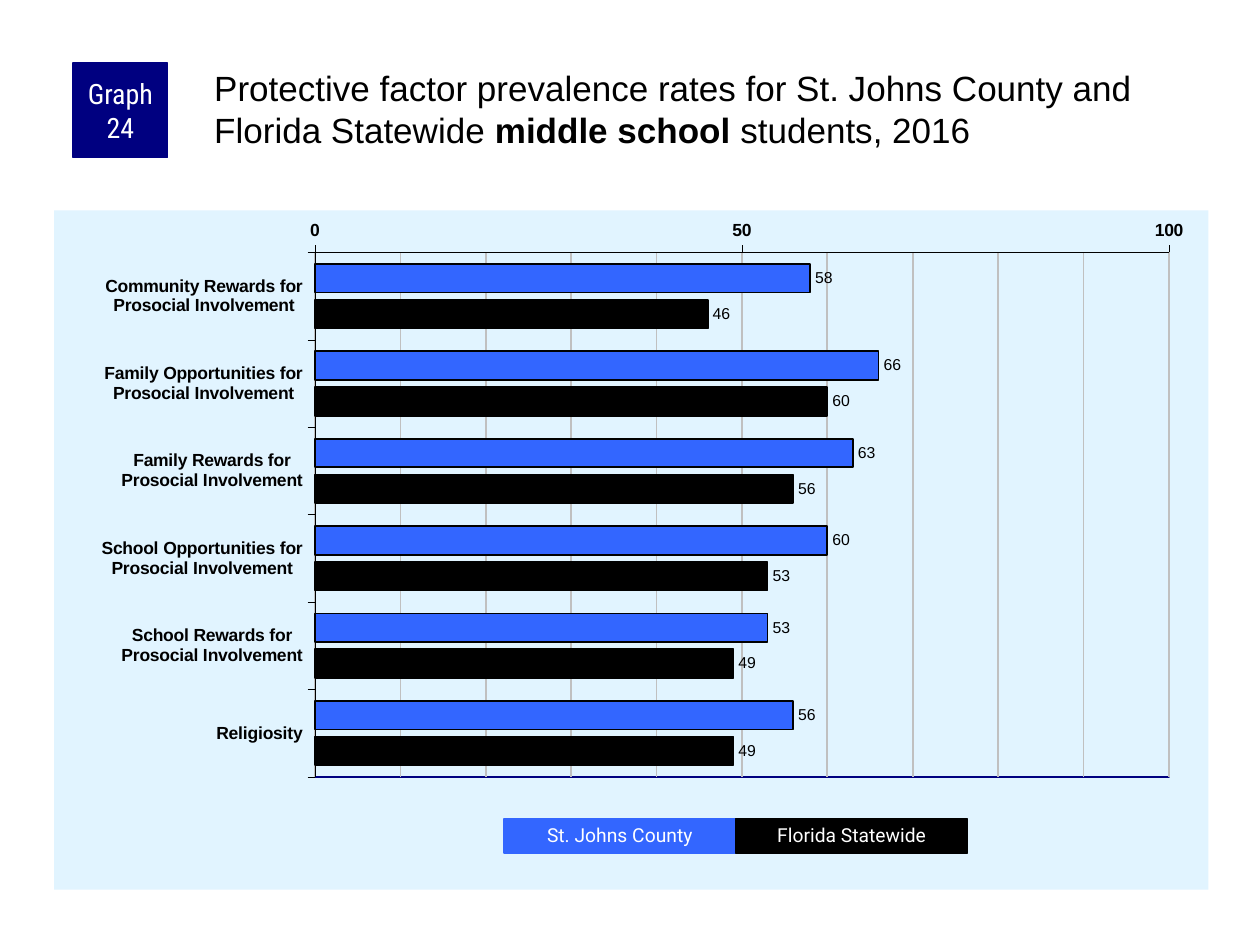
from dataclasses import dataclass

from lxml import etree
from pptx import Presentation
from pptx.chart.data import CategoryChartData
from pptx.dml.color import RGBColor
from pptx.enum.chart import XL_AXIS_CROSSES, XL_CHART_TYPE, XL_LABEL_POSITION, XL_TICK_MARK
from pptx.enum.shapes import MSO_SHAPE
from pptx.enum.text import MSO_ANCHOR, MSO_AUTO_SIZE, PP_ALIGN
from pptx.oxml import parse_xml
from pptx.oxml.ns import nsdecls, qn
from pptx.util import Inches, Pt

BAR = XL_CHART_TYPE.BAR_CLUSTERED
AT_MAXIMUM = XL_AXIS_CROSSES.MAXIMUM
OUTSIDE_END = XL_LABEL_POSITION.OUTSIDE_END
TICK_OUT, TICK_NONE = XL_TICK_MARK.OUTSIDE, XL_TICK_MARK.NONE
RECT = MSO_SHAPE.RECTANGLE
TOP, MIDDLE = MSO_ANCHOR.TOP, MSO_ANCHOR.MIDDLE
LEFT, CENTER = PP_ALIGN.LEFT, PP_ALIGN.CENTER
NO_AUTOFIT = MSO_AUTO_SIZE.NONE


@dataclass(frozen=True)
class Theme:
    navy: str = "000080"
    county: str = "3366FF"
    state: str = "000000"
    panel: str = "E1F4FF"
    grid: str = "C0C0C0"
    text: str = "000000"
    white: str = "FFFFFF"
    body_font: str = "Arial"
    badge_font: str = "Roboto Condensed"
    legend_font: str = "Roboto"
    title_size: float = 20
    badge_size: float = 16
    legend_size: float = 11
    axis_size: float = 10
    label_size: float = 9


def rgb(value):
    return RGBColor.from_string(value)


def style_font(font, name, size, color, bold=False):
    font.name, font.size, font.bold = name, Pt(size), bold
    font.color.rgb = rgb(color)


def style_line(line, color, width):
    line.color.rgb = rgb(color)
    line.width = Pt(width)


class SlideBuilder:
    def __init__(self, slide, theme):
        self.s, self.theme = slide, theme

    def title(self, box, runs):
        t = self.theme
        sp = self.s.shapes.title
        sp.left, sp.top, sp.width, sp.height = map(Inches, box)
        tf = sp.text_frame
        tf.word_wrap, tf.auto_size, tf.vertical_anchor = True, NO_AUTOFIT, TOP
        tf.margin_left = tf.margin_top = Inches(0.03)
        tf.margin_right = tf.margin_bottom = 0
        p = tf.paragraphs[0]
        p.alignment = LEFT
        for text, bold in runs:
            r = p.add_run()
            r.text = text
            style_font(r.font, t.body_font, t.title_size, t.text, bold)

    def block(self, box, text, fill, font, size, line_spacing=1.0):
        sp = self.s.shapes.add_shape(RECT, *map(Inches, box))
        sp.shadow.inherit = False
        sp.fill.solid()
        sp.fill.fore_color.rgb = rgb(fill)
        style_line(sp.line, fill, 0.75)
        tf = sp.text_frame
        tf.word_wrap, tf.vertical_anchor = True, MIDDLE
        tf.margin_left = tf.margin_right = Inches(0.05)
        tf.margin_top = tf.margin_bottom = 0
        p = tf.paragraphs[0]
        p.alignment, p.line_spacing = CENTER, line_spacing
        r = p.add_run()
        r.text = text
        style_font(r.font, font, size, self.theme.white)

    def bar_chart(self, box, categories, series, plot_box):
        t = self.theme
        data = CategoryChartData()
        data.categories = categories
        for name, values, _ in series:
            data.add_series(name, values)
        chart = self.s.shapes.add_chart(BAR, *map(Inches, box), data).chart
        chart.has_legend = chart.has_title = False
        style_font(chart.font, t.body_font, t.axis_size, t.text)

        plot = chart.plots[0]
        plot.gap_width, plot.overlap, plot.vary_by_categories = 80, -25, False
        for bars, (_, _, color) in zip(plot.series, series):
            bars.format.fill.solid()
            bars.format.fill.fore_color.rgb = rgb(color)
            style_line(bars.format.line, t.text, 1)
            labels = bars.data_labels
            labels.show_value, labels.position = True, OUTSIDE_END
            style_font(labels.font, t.body_font, t.label_size, t.text)

        for axis in (chart.category_axis, chart.value_axis):
            axis.major_tick_mark, axis.minor_tick_mark = TICK_OUT, TICK_NONE
            style_line(axis.format.line, t.text, 0.25)
            style_font(axis.tick_labels.font, t.body_font, t.axis_size, t.text, True)
        # First category on top, value axis kept at the bottom
        chart.category_axis.reverse_order = True
        chart.category_axis.crosses = AT_MAXIMUM
        chart.category_axis.has_major_gridlines = False

        values = chart.value_axis
        values.minimum_scale, values.maximum_scale = 0, 100
        values.major_unit, values.minor_unit = 50, 10
        values.has_major_gridlines = values.has_minor_gridlines = True
        style_line(values.major_gridlines.format.line, t.grid, 1)
        minor = values.major_gridlines.format.line
        self.copy_gridlines(values, minor)
        self.chart_areas(chart, plot_box)

    def copy_gridlines(self, axis, line):
        """Give the minor gridlines the colour and width of the major ones."""
        grid = axis.major_gridlines.format.line.color.rgb
        minor = axis.format.line and self.find_minor(axis)
        minor.append(parse_xml(
            f'<c:spPr {nsdecls("c", "a")}><a:ln w="{line.width}"><a:solidFill>'
            f'<a:srgbClr val="{grid}"/></a:solidFill></a:ln></c:spPr>'))

    @staticmethod
    def find_minor(axis):
        return axis._element.find(qn("c:minorGridlines"))

    def chart_areas(self, chart, plot_box):
        """Fill the panel, frame the plot and fix its inner position."""
        t = self.theme
        space = chart._chartSpace
        space.find(qn("c:chart")).addnext(parse_xml(
            f'<c:spPr {nsdecls("c", "a")}><a:solidFill><a:srgbClr val="{t.panel}"/>'
            '</a:solidFill><a:ln><a:noFill/></a:ln></c:spPr>'))
        area = space.find(".//" + qn("c:plotArea"))
        area.append(parse_xml(
            f'<c:spPr {nsdecls("c", "a")}><a:noFill/><a:ln w="{Pt(1)}"><a:solidFill>'
            f'<a:srgbClr val="{t.navy}"/></a:solidFill></a:ln></c:spPr>'))
        for old in area.findall(qn("c:layout")):
            area.remove(old)
        layout = etree.Element(qn("c:layout"))
        manual = etree.SubElement(layout, qn("c:manualLayout"))
        settings = [("layoutTarget", "inner"), ("xMode", "edge"), ("yMode", "edge")]
        settings += zip("xywh", plot_box)
        for tag, value in settings:
            etree.SubElement(manual, qn("c:" + tag)).set("val", str(value))
        area.insert(0, layout)


def main():
    prs = Presentation()
    prs.slide_width, prs.slide_height = Inches(10), Inches(7.5)
    theme = Theme()
    page = SlideBuilder(prs.slides.add_slide(prs.slide_layouts[5]), theme)

    # Protective factor chart
    involvement = "\nProsocial Involvement"
    factors = ["Community Rewards for", "Family Opportunities for", "Family Rewards for",
               "School Opportunities for", "School Rewards for"]
    categories = [factor + involvement for factor in factors] + ["Religiosity"]
    series = [("St. Johns County", (58, 66, 63, 60, 53, 56), theme.county),
              ("Florida Statewide", (46, 60, 56, 53, 49, 49), theme.state)]
    page.bar_chart((0.43, 1.67, 9.16, 5.39), categories, series, (0.226, 0.062, 0.74, 0.772))

    # Heading: graph number and title
    page.block((0.58, 0.5, 0.75, 0.75), "Graph 24", theme.navy,
               theme.badge_font, theme.badge_size)
    page.title((1.67, 0.5, 7.92, 0.83), [
        ("Protective factor prevalence rates for St. Johns County and Florida Statewide ", False),
        ("middle school ", True),
        ("students, 2016", False)])

    # Legend: one block per series, side by side
    width = 1.84
    for i, (name, _, color) in enumerate(series):
        page.block((4 + i * width, 6.5, width, 0.27), name, color,
                   theme.legend_font, theme.legend_size, 0.9)

    prs.save("out.pptx")


if __name__ == "__main__":
    main()
